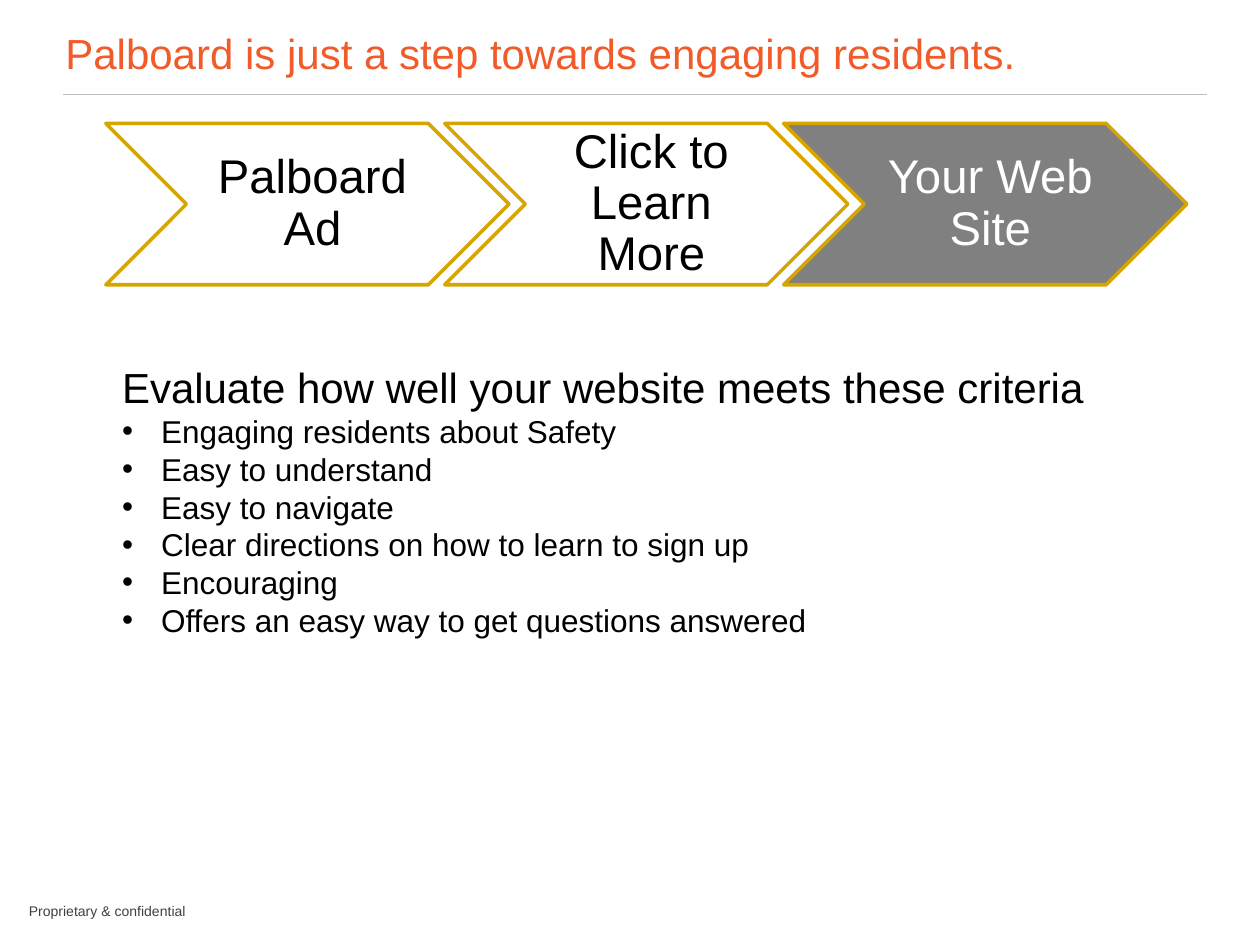
from dataclasses import dataclass

from lxml.etree import SubElement
from pptx import Presentation
from pptx.dml.color import RGBColor
from pptx.enum.shapes import MSO_CONNECTOR, MSO_SHAPE
from pptx.enum.text import MSO_ANCHOR, PP_ALIGN
from pptx.oxml.ns import qn
from pptx.slide import Slide
from pptx.text.text import TextFrame, _Paragraph
from pptx.util import Inches, Pt

COLORS = {
    "title": "F15A29",
    "rule": "BFBFBF",
    "footer": "404040",
    "gold": "D7A500",
    "white": "FFFFFF",
    "gray": "808080",
    "black": "000000",
}


@dataclass
class Step:
    label: str
    fill: str
    text: str


STEPS = [
    Step("Palboard Ad", "white", "black"),
    Step("Click to Learn More", "white", "black"),
    Step("Your Web Site", "gray", "white"),
]
STEP_LEFT, STEP_TOP, STEP_PITCH = 0.84, 0.98, 2.69
STEP_WIDTH, STEP_HEIGHT = 3.2, 1.28

CRITERIA = [
    "Engaging residents about Safety",
    "Easy to understand",
    "Easy to navigate",
    "Clear directions on how to learn to sign up",
    "Encouraging",
    "Offers an easy way to get questions answered",
]
BULLET_INDENT = 0.31


def color(name: str) -> RGBColor:
    return RGBColor.from_string(COLORS[name])


def write(paragraph: _Paragraph, text: str, size: float, color_name: str) -> None:
    paragraph.text = text
    for run in paragraph.runs:
        run.font.name = "Arial"
        run.font.size = Pt(size)
        run.font.color.rgb = color(color_name)


def add_text_frame(slide: Slide, left: float, top: float, width: float, height: float) -> TextFrame:
    frame = slide.shapes.add_textbox(
        Inches(left), Inches(top), Inches(width), Inches(height)
    ).text_frame
    frame.word_wrap = True
    return frame


def add_rule(slide: Slide) -> None:
    rule = slide.shapes.add_connector(
        MSO_CONNECTOR.STRAIGHT, Inches(0.5), Inches(0.75), Inches(9.58), Inches(0.75)
    )
    rule.line.color.rgb = color("rule")
    rule.line.width = Pt(0.5)
    SubElement(rule._element.spPr, qn("a:effectLst"))


def add_footer(slide: Slide) -> None:
    footer = add_text_frame(slide, 0.13, 7.05, 2.28, 0.3).paragraphs[0]
    footer.line_spacing = 1.5
    write(footer, "Proprietary & confidential", 8, "footer")


def add_title(slide: Slide) -> None:
    title = add_text_frame(slide, 0.42, -0.08, 7.89, 1)
    title.vertical_anchor = MSO_ANCHOR.MIDDLE
    write(title.paragraphs[0], "Palboard is just a step towards engaging residents.", 24, "title")


def add_step(slide: Slide, step: Step, left: float) -> None:
    chevron = slide.shapes.add_shape(
        MSO_SHAPE.CHEVRON, Inches(left), Inches(STEP_TOP), Inches(STEP_WIDTH), Inches(STEP_HEIGHT)
    )
    chevron.shadow.inherit = False
    chevron.fill.solid()
    chevron.fill.fore_color.rgb = color(step.fill)
    chevron.line.color.rgb = color("gold")
    chevron.line.width = Pt(2)
    frame = chevron.text_frame
    frame.word_wrap = True
    frame.vertical_anchor = MSO_ANCHOR.MIDDLE
    frame.margin_left = Inches(0.12)
    frame.margin_right = frame.margin_top = frame.margin_bottom = Inches(0.04)
    label = frame.paragraphs[0]
    label.alignment = PP_ALIGN.CENTER
    label.line_spacing = 0.9
    write(label, step.label, 27, step.text)


def add_criteria(slide: Slide) -> None:
    frame = add_text_frame(slide, 0.87, 2.82, 7.92, 2.32)
    write(frame.paragraphs[0], "Evaluate how well your website meets these criteria", 24, "black")
    for criterion in CRITERIA:
        item = frame.add_paragraph()
        properties = item._p.get_or_add_pPr()
        properties.set("marL", str(Inches(BULLET_INDENT)))
        properties.set("indent", str(-Inches(BULLET_INDENT)))
        SubElement(properties, qn("a:buFont"), typeface="Arial")
        SubElement(properties, qn("a:buChar"), char="•")
        write(item, criterion, 18, "black")


def main() -> None:
    presentation = Presentation()
    presentation.slide_width = Inches(10)
    presentation.slide_height = Inches(7.5)
    slide = presentation.slides.add_slide(presentation.slide_layouts[6])
    add_rule(slide)
    add_footer(slide)
    add_title(slide)
    for index, step in enumerate(STEPS):
        add_step(slide, step, STEP_LEFT + index * STEP_PITCH)
    add_criteria(slide)
    presentation.save("out.pptx")


if __name__ == "__main__":
    main()
